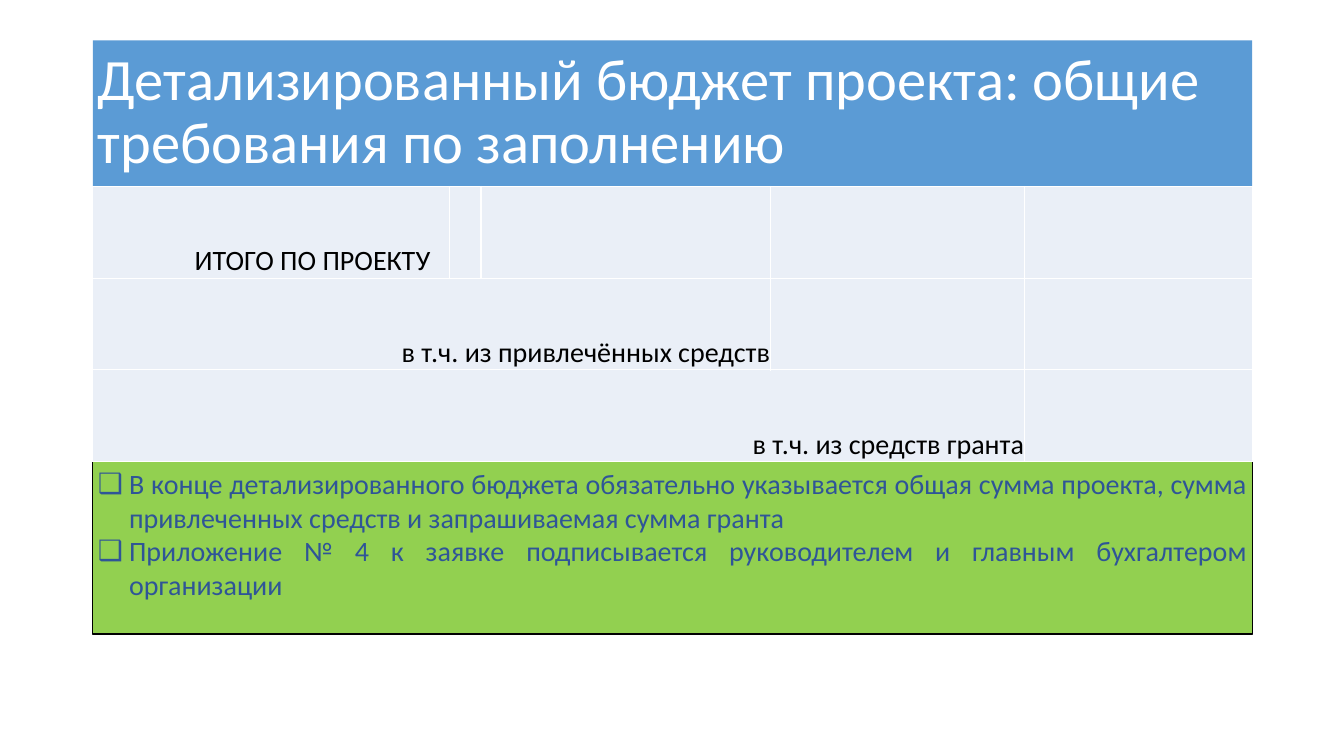
import pptx
import pptx.dml.color
import pptx.enum.text
import pptx.oxml.ns
import pptx.util
from lxml import etree

RGBColor = pptx.dml.color.RGBColor
Inches = pptx.util.Inches
Pt = pptx.util.Pt
Align = pptx.enum.text.PP_ALIGN
Anchor = pptx.enum.text.MSO_ANCHOR
qn = pptx.oxml.ns.qn

WHITE = RGBColor(0xFF, 0xFF, 0xFF)
BLACK = RGBColor(0, 0, 0)
BLUE = RGBColor(0x5B, 0x9B, 0xD5)
NAVY = RGBColor(0x2F, 0x55, 0x97)
GREEN = RGBColor(0x92, 0xD0, 0x50)
PALE = RGBColor(0xEA, 0xEF, 0xF7)

LEFT, WIDTH = 0.92, 11.5
INSET = 0.05
COLUMNS = [3.54, 0.31, 2.87, 2.52, 2.26]
ROW_HEIGHT = 0.91
# label, columns spanned, right margin
TOTALS = [
    ("ИТОГО ПО ПРОЕКТУ", 1, 0.19),
    ("в т.ч. из привлечённых средств", 3, 0),
    ("в т.ч. из средств гранта", 4, 0),
]
RULES = [
    "В конце детализированного бюджета обязательно указывается общая сумма "
    "проекта, сумма привлеченных средств и запрашиваемая сумма гранта",
    "Приложение № 4 к заявке подписывается руководителем и главным "
    "бухгалтером организации",
]


class BudgetSlide:
    font = "Calibri"
    text_size = 20

    def __init__(self, deck):
        self.page = deck.slides.add_slide(deck.slide_layouts[1])

    def format_text(self, para, size, color, align):
        para.alignment = align
        for span in para.runs:
            span.font.name = self.font
            span.font.size = Pt(size)
            span.font.color.rgb = color

    def place(self, box, top, height, fill, anchor):
        box.left, box.top = Inches(LEFT), Inches(top)
        box.width, box.height = Inches(WIDTH), Inches(height)
        box.fill.solid()
        box.fill.fore_color.rgb = fill
        frame = box.text_frame
        frame.word_wrap = True
        frame.auto_size = pptx.enum.text.MSO_AUTO_SIZE.NONE
        frame.vertical_anchor = anchor
        frame.margin_left = frame.margin_right = Inches(INSET)
        frame.margin_top = frame.margin_bottom = Inches(INSET)
        return frame

    def title(self, text, top, height):
        frame = self.place(self.page.shapes.title, top, height, BLUE, Anchor.MIDDLE)
        frame.text = text
        para = frame.paragraphs[0]
        para.line_spacing = 0.9
        self.format_text(para, 41.8, WHITE, Align.LEFT)

    def bullets(self, items, top, height):
        box = self.page.placeholders[1]
        frame = self.place(box, top, height, GREEN, Anchor.TOP)
        box.line.color.rgb = BLACK
        box.line.width = Pt(1)
        frame.text = "\n".join(items)
        for para in frame.paragraphs:
            para.space_before = Pt(0)
            self.format_text(para, self.text_size, NAVY, Align.JUSTIFY)
            properties = para._p.get_or_add_pPr()
            properties.set("marL", str(Inches(0.31)))
            properties.set("indent", str(-Inches(0.31)))
            etree.SubElement(properties, qn("a:buChar")).set("char", "❑")

    def style_cell(self, cell):
        properties = cell._tc.get_or_add_tcPr()
        for side in ("a:lnL", "a:lnR", "a:lnT", "a:lnB"):
            line = etree.SubElement(properties, qn(side), w=str(Pt(1)))
            fill = etree.SubElement(line, qn("a:solidFill"))
            etree.SubElement(fill, qn("a:srgbClr"), val=str(WHITE))
        cell.fill.solid()
        cell.fill.fore_color.rgb = PALE
        cell.vertical_anchor = Anchor.BOTTOM
        cell.margin_left = cell.margin_right = 0
        cell.margin_top = cell.margin_bottom = 0

    def totals_table(self, totals, top):
        table = self.page.shapes.add_table(
            len(totals), len(COLUMNS), Inches(LEFT), Inches(top),
            Inches(WIDTH), Inches(ROW_HEIGHT * len(totals))).table
        table.first_row = table.horz_banding = False
        for column, width in zip(table.columns, COLUMNS):
            column.width = Inches(width)
        for cell in table.iter_cells():
            self.style_cell(cell)
        for index, (label, columns, margin) in enumerate(totals):
            table.rows[index].height = Inches(ROW_HEIGHT)
            cell = table.cell(index, 0)
            if columns > 1:
                cell.merge(table.cell(index, columns - 1))
            cell.margin_right = Inches(margin)
            cell.text_frame.text = label
            self.format_text(cell.text_frame.paragraphs[0], self.text_size,
                             BLACK, Align.RIGHT)


def main():
    deck = pptx.Presentation()
    deck.slide_width, deck.slide_height = Inches(13.33), Inches(7.5)
    slide = BudgetSlide(deck)

    # Heading band
    slide.title("Детализированный бюджет проекта: общие требования по заполнению",
                0.4, 1.45)
    # Filling rules
    slide.bullets(RULES, 4.58, 1.71)
    # Budget totals
    slide.totals_table(TOTALS, 1.85)

    deck.save("out.pptx")


if __name__ == "__main__":
    main()
